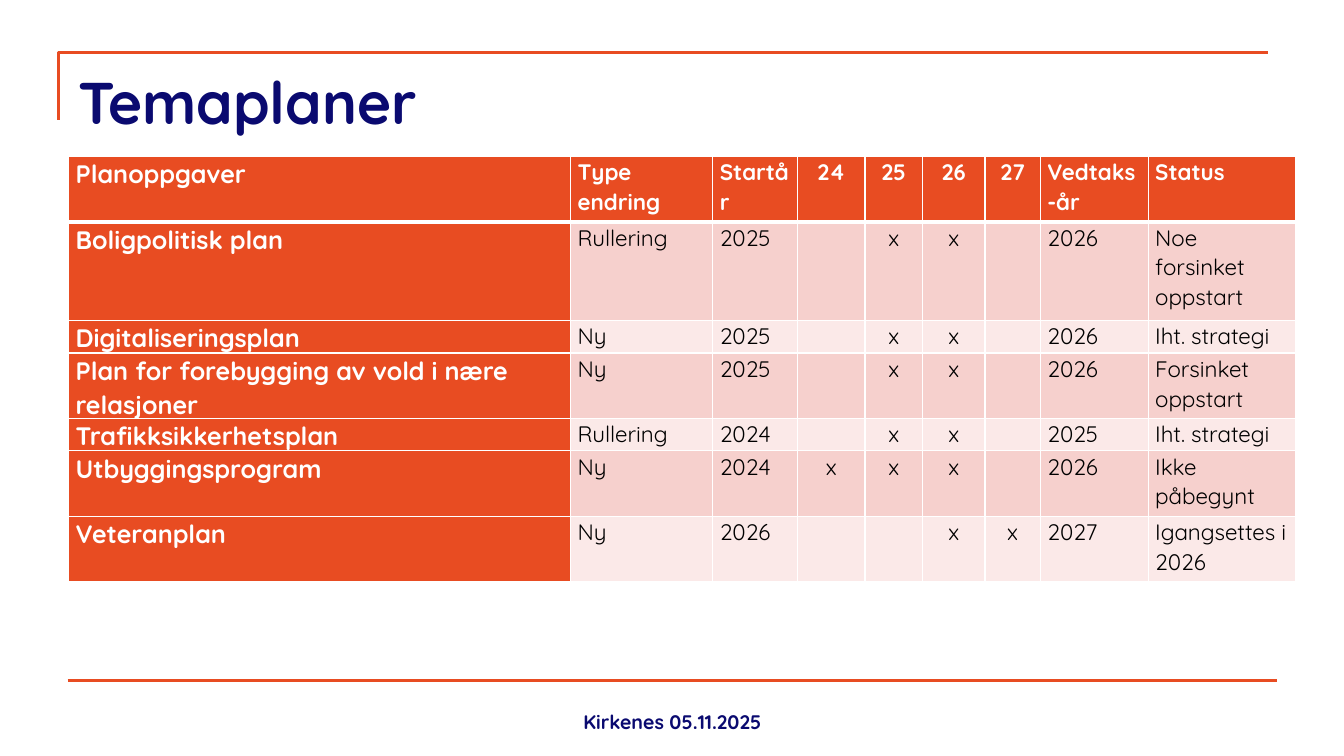
from lxml.etree import SubElement
from pptx import Presentation
from pptx.dml.color import RGBColor as RGB
from pptx.enum.shapes import MSO_CONNECTOR as CONN
from pptx.enum.text import MSO_ANCHOR as ANCHOR, PP_ALIGN as ALIGN
from pptx.oxml.ns import qn
from pptx.util import Inches, Pt

FONT = "Quicksand"
COLORS = {
    "accent": "E84C22",
    "navy": "0A0A70",
    "white": "FFFFFF",
    "black": "000000",
    "band_dark": "F6D0CD",
    "band_light": "FBE9E8",
}
COL_WIDTHS = [4.98, 1.41, 0.84, 0.67, 0.57, 0.62, 0.55, 1.07, 1.46]
ROW_HEIGHTS = [0.65, 0.98, 0.32, 0.65, 0.32, 0.65, 0.65]
YEAR_COLS = range(3, 7)
PLANS = [
    ["Planoppgaver", "Type endring", "Startår", "24", "25", "26", "27", "Vedtaks-år", "Status"],
    ["Boligpolitisk plan", "Rullering", "2025", "", "x", "x", "", "2026", "Noe forsinket oppstart"],
    ["Digitaliseringsplan", "Ny", "2025", "", "x", "x", "", "2026", "Iht. strategi"],
    ["Plan for forebygging av vold i nære relasjoner", "Ny", "2025", "", "x", "x", "", "2026",
     "Forsinket oppstart"],
    ["Trafikksikkerhetsplan", "Rullering", "2024", "", "x", "x", "", "2025", "Iht. strategi"],
    ["Utbyggingsprogram", "Ny", "2024", "x", "x", "x", "", "2026", "Ikke påbegynt"],
    ["Veteranplan", "Ny", "2026", "", "", "x", "x", "2027", "Igangsettes i 2026"],
]


def color(name):
    """Return the named colour."""
    return RGB.from_string(COLORS[name])


def style_font(font, size, name, bold):
    """Apply the deck font with a size, colour and weight."""
    font.name = FONT
    font.size = Pt(size)
    font.bold = bold
    font.color.rgb = color(name)


def style_line(s):
    """Give a shape or connector the accent line without a shadow."""
    s.line.color.rgb = color("accent")
    s.line.width = Pt(2.25)
    SubElement(s._element.spPr, qn("a:effectLst"))


def add_frame(slide, x, y, w, h, rule_y):
    """Draw the corner bracket in its box and the rule above the footer."""
    builder = slide.shapes.build_freeform(Inches(x), Inches(y + h))
    builder.add_line_segments(
        [(Inches(x), Inches(y)), (Inches(x + w), Inches(y))], close=False)
    bracket = builder.convert_to_shape()
    bracket.fill.background()
    style_line(bracket)
    left = x + 0.09
    rule = slide.shapes.add_connector(
        CONN.STRAIGHT, Inches(left), Inches(rule_y), Inches(left + w), Inches(rule_y))
    style_line(rule)


def add_text(slide, x, y, w, h, text, size, align=ALIGN.LEFT, anchor=ANCHOR.TOP):
    """Add a bold navy line of text in the given box."""
    tf = slide.shapes.add_textbox(Inches(x), Inches(y), Inches(w), Inches(h)).text_frame
    tf.word_wrap = True
    tf.vertical_anchor = anchor
    p = tf.paragraphs[0]
    p.text = text
    p.alignment = align
    style_font(p.font, size, "navy", True)


def add_borders(cell, bottom):
    """Draw white cell borders with the given bottom width in points."""
    tc_pr = cell._tc.get_or_add_tcPr()
    for side, width in (("L", 1), ("R", 1), ("T", 1), ("B", bottom)):
        ln = SubElement(tc_pr, qn(f"a:ln{side}"), w=str(Pt(width)))
        fill = SubElement(ln, qn("a:solidFill"))
        SubElement(fill, qn("a:srgbClr"), val=COLORS["white"])


def fill_cell(cell, row, col, text):
    """Write and style one cell by its place in the table."""
    heading = row == 0 or col == 0
    band = "band_dark" if row % 2 else "band_light"
    add_borders(cell, 1 if row else 3)
    cell.fill.solid()
    cell.fill.fore_color.rgb = color("accent" if heading else band)
    cell.margin_left = cell.margin_right = Inches(0.07)
    cell.margin_top = cell.margin_bottom = 0
    p = cell.text_frame.paragraphs[0]
    p.text = text
    p.line_spacing = 1.07
    p.alignment = ALIGN.CENTER if col in YEAR_COLS else ALIGN.LEFT
    style_font(p.font, 16 if col else 18, "white" if heading else "black", heading)


def add_plan_table(slide, x, y):
    """Build the plan table from its top left corner."""
    table = slide.shapes.add_table(
        len(PLANS), len(COL_WIDTHS), Inches(x), Inches(y),
        Inches(sum(COL_WIDTHS)), Inches(sum(ROW_HEIGHTS))).table
    table.first_col = True
    for column, width in zip(table.columns, COL_WIDTHS):
        column.width = Inches(width)
    for r, (height, values) in enumerate(zip(ROW_HEIGHTS, PLANS)):
        table.rows[r].height = Inches(height)
        for c, text in enumerate(values):
            fill_cell(table.cell(r, c), r, c, text)


def main():
    """Build the slide and save it."""
    prs = Presentation()
    prs.slide_width, prs.slide_height = Inches(13.33), Inches(7.5)
    slide = prs.slides.add_slide(prs.slide_layouts[6])
    add_frame(slide, 0.58, 0.52, 12, 0.67, 6.75)
    add_text(slide, 0.68, 0.6, 12, 1.08, "Temaplaner", 42)
    add_plan_table(slide, 0.68, 1.55)
    add_text(slide, 4.56, 6.83, 4.22, 0.5, "Kirkenes 05.11.2025", 14,
             ALIGN.CENTER, ANCHOR.BOTTOM)
    prs.save("out.pptx")


if __name__ == "__main__":
    main()
